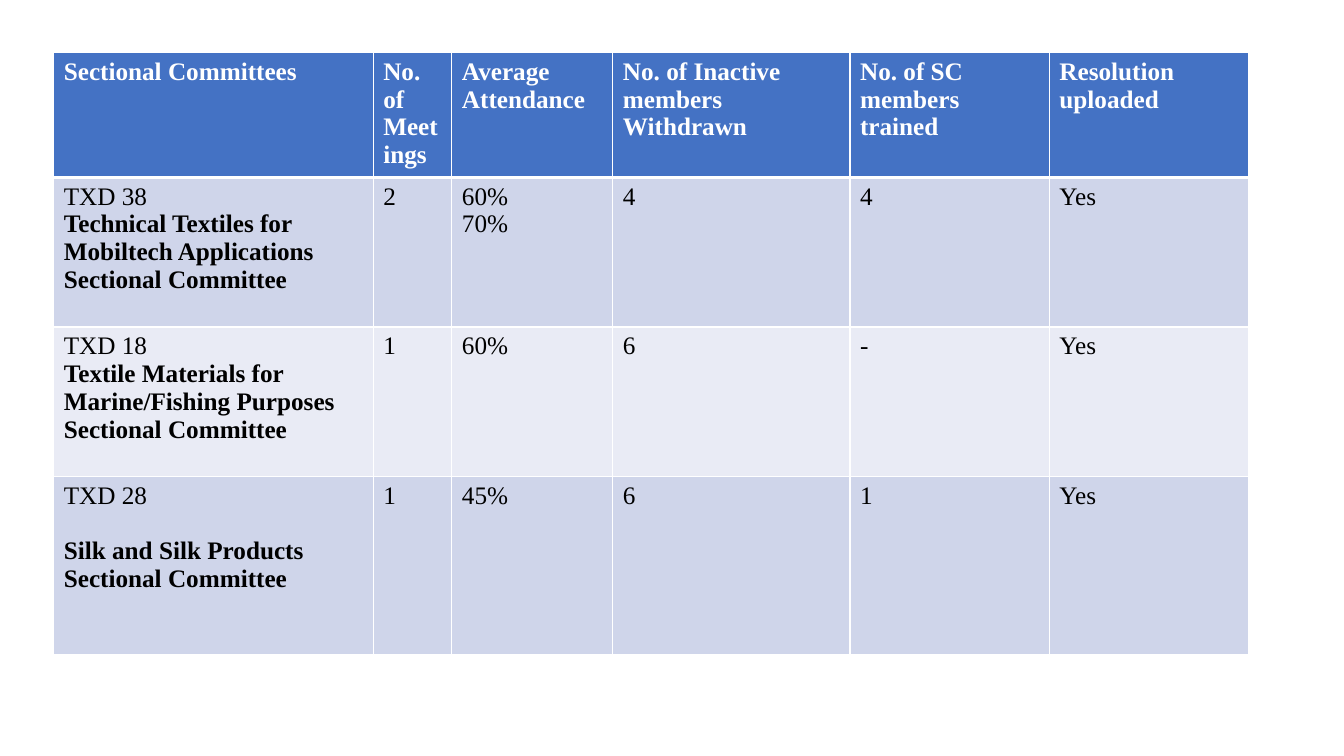
from dataclasses import dataclass

from lxml import etree
from pptx import Presentation
from pptx.dml.color import RGBColor
from pptx.oxml.ns import qn
from pptx.util import Pt

FONT = "Times New Roman"
TEXT_SIZE = 18
COLORS = {
    "header": "4472C4",
    "band_dark": "CFD5EA",
    "band_light": "E9EBF5",
    "white": "FFFFFF",
    "black": "000000",
}
TABLE_LEFT, TABLE_TOP = 38.4, 37.6
HEADER_HEIGHT = 89.2


@dataclass
class Column:
    heading: str
    width: float


@dataclass
class Committee:
    code: str
    name: str
    values: list[str]
    height: float
    name_gap: float = 0


COLUMNS = [
    Column("Sectional Committees", 228.2),
    Column("No. of Meetings", 56.2),
    Column("Average Attendance", 115),
    Column("No. of Inactive members Withdrawn", 169.4),
    Column("No. of SC members trained", 142.4),
    Column("Resolution uploaded", 142),
]
COMMITTEES = [
    Committee("TXD 38", "Technical Textiles for Mobiltech Applications Sectional Committee",
              ["2", "60%\n70%", "4", "4", "Yes"], 106.8),
    Committee("TXD 18", "Textile Materials for Marine/Fishing Purposes Sectional Committee",
              ["1", "60%", "6", "-", "Yes"], 106.8),
    Committee("TXD 28", "Silk and Silk Products Sectional Committee",
              ["1", "45%", "6", "1", "Yes"], 127, name_gap=20),
]


def set_borders(cell, bottom_width: float) -> None:
    properties = cell._tc.get_or_add_tcPr()
    widths = {"a:lnL": 1, "a:lnR": 1, "a:lnT": 1, "a:lnB": bottom_width}
    for tag, width in widths.items():
        line = etree.SubElement(properties, qn(tag), w=str(Pt(width)))
        fill = etree.SubElement(line, qn("a:solidFill"))
        etree.SubElement(fill, qn("a:srgbClr"), val=COLORS["white"])


def fill_cell(cell, text: str, fill: str, color: str,
              bold_from: int | None = None, bottom_width: float = 1) -> None:
    """Write the text; paragraphs from index bold_from onwards are bold."""
    set_borders(cell, bottom_width)
    cell.fill.solid()
    cell.fill.fore_color.rgb = RGBColor.from_string(COLORS[fill])
    cell.text_frame.text = text
    for index, para in enumerate(cell.text_frame.paragraphs):
        for span in para.runs:
            span.font.name = FONT
            span.font.size = Pt(TEXT_SIZE)
            span.font.bold = bold_from is not None and index >= bold_from
            span.font.color.rgb = RGBColor.from_string(COLORS[color])


def add_committee_table(page) -> None:
    width = sum(column.width for column in COLUMNS)
    height = HEADER_HEIGHT + sum(committee.height for committee in COMMITTEES)
    table = page.shapes.add_table(
        len(COMMITTEES) + 1, len(COLUMNS),
        Pt(TABLE_LEFT), Pt(TABLE_TOP), Pt(width), Pt(height)).table

    # Header row
    table.rows[0].height = Pt(HEADER_HEIGHT)
    for index, column in enumerate(COLUMNS):
        table.columns[index].width = Pt(column.width)
        fill_cell(table.cell(0, index), column.heading, "header", "white",
                  bold_from=0, bottom_width=3)

    # One banded row per committee
    for row, committee in enumerate(COMMITTEES, start=1):
        table.rows[row].height = Pt(committee.height)
        band = "band_dark" if row % 2 else "band_light"
        title = table.cell(row, 0)
        fill_cell(title, f"{committee.code}\n{committee.name}", band, "black", bold_from=1)
        title.text_frame.paragraphs[1].space_before = Pt(committee.name_gap)
        for index, value in enumerate(committee.values, start=1):
            fill_cell(table.cell(row, index), value, band, "black")


def main() -> None:
    deck = Presentation()
    deck.slide_width, deck.slide_height = Pt(960), Pt(540)
    page = deck.slides.add_slide(deck.slide_layouts[6])
    add_committee_table(page)
    deck.save("out.pptx")


if __name__ == "__main__":
    main()
